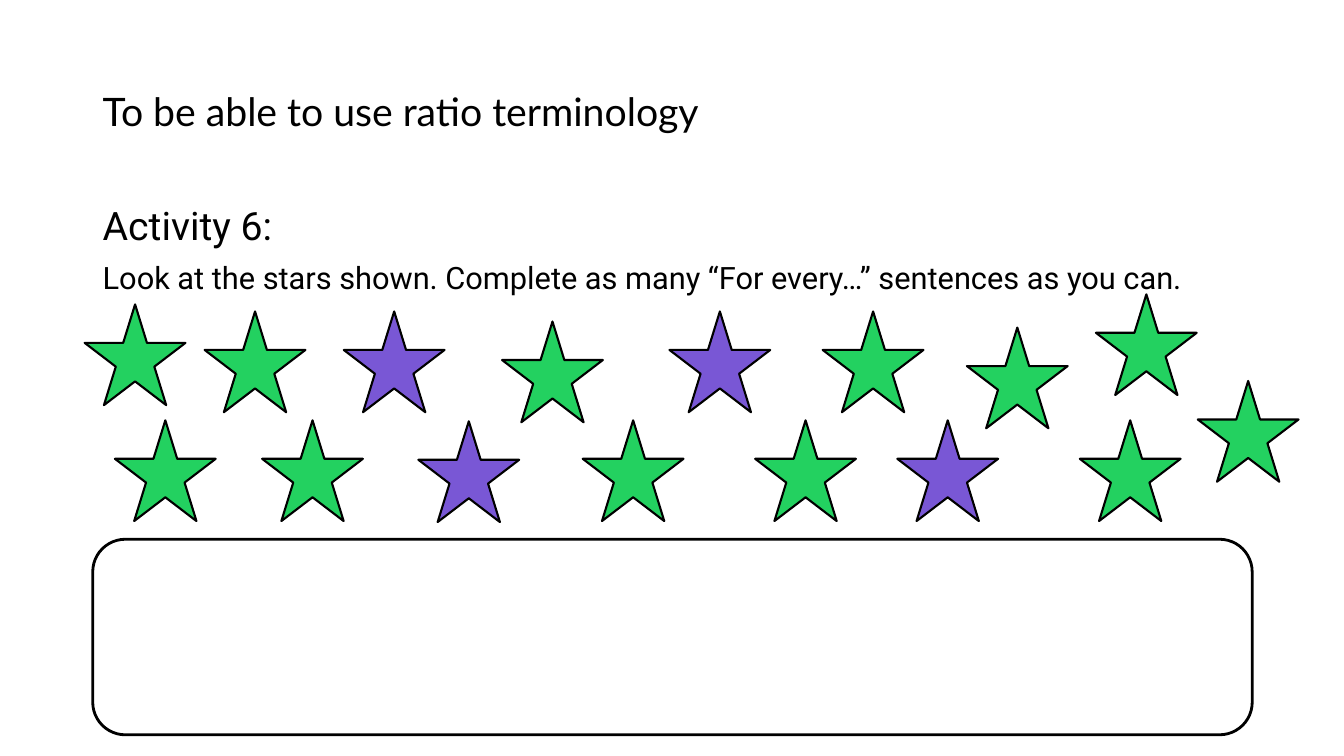
import dataclasses

import pptx
import pptx.dml.color
import pptx.enum.shapes
import pptx.enum.text
import pptx.util

PX = 9144
SHAPE = pptx.enum.shapes.MSO_SHAPE
ANCHOR = pptx.enum.text.MSO_ANCHOR


@dataclasses.dataclass(frozen=True)
class Theme:
    """Colours, fonts and sizes of the slide."""
    ink: str = "000000"
    paper: str = "FFFFFF"
    green: str = "23D160"
    purple: str = "7957D5"
    title_font: str = "Lato"
    body_font: str = "Roboto"
    heading_size: int = 28
    task_size: int = 22
    star_line: float = 1.5
    answer_line: float = 2


THEME = Theme()
STAR = 100
STARS = [
    (119, 17, THEME.green), (176, 125, THEME.green), (257, 17, THEME.purple),
    (414, 27, THEME.green), (494, 125, THEME.green), (580, 17, THEME.purple),
    (331, 126, THEME.purple), (665, 125, THEME.green), (875, 33, THEME.green),
    (987, 125, THEME.green), (806, 125, THEME.purple), (732, 17, THEME.green),
    (30, 125, THEME.green), (0, 10, THEME.green), (1003, 0, THEME.green),
    (1104, 86, THEME.green),
]


def emu(*lengths):
    """Turn px lengths into EMU."""
    return [pptx.util.Emu(n * PX) for n in lengths]


def rgb(color):
    """Turn a hex string into a colour."""
    return pptx.dml.color.RGBColor.from_string(color)


def add_box(s, box, anchor=ANCHOR.TOP):
    """Add a wrapping text box and return its text frame."""
    tf = s.shapes.add_textbox(*emu(*box)).text_frame
    tf.word_wrap = True
    tf.vertical_anchor = anchor
    return tf


def write(p, text, *, font, size, color=THEME.ink, before=0):
    """Write formatted text into a paragraph."""
    p.line_spacing = 0.9
    p.space_before = pptx.util.Pt(before)
    r = p.add_run()
    r.text = text
    r.font.name = font
    r.font.size = pptx.util.Pt(size)
    r.font.color.rgb = rgb(color)


def add_outlined(s, kind, box, fill, width):
    """Add a filled preset shape with a dark outline."""
    sp = s.shapes.add_shape(kind, *emu(*box))
    sp.shadow.inherit = False
    sp.fill.solid()
    sp.fill.fore_color.rgb = rgb(fill)
    sp.line.color.rgb = rgb(THEME.ink)
    sp.line.width = pptx.util.Pt(width)


def add_title(s, box):
    """Place the learning objective."""
    tf = add_box(s, box, ANCHOR.MIDDLE)
    write(tf.paragraphs[0], "To be able to use ratio terminology",
          font=THEME.title_font, size=THEME.heading_size)


def add_activity(s, box):
    """Place the activity heading and its instruction."""
    tf = add_box(s, box)
    write(tf.paragraphs[0], "Activity 6:", font=THEME.body_font, size=THEME.heading_size)
    write(tf.add_paragraph(),
          "Look at the stars shown. Complete as many “For every…” sentences as you can.",
          font=THEME.body_font, size=THEME.task_size, before=10)


def add_stars(s, box):
    """Scatter the green and purple stars inside the box."""
    left, top, _, _ = box
    for x, y, color in STARS:
        add_outlined(s, SHAPE.STAR_5_POINT, (left + x, top + y, STAR, STAR),
                     color, THEME.star_line)


def add_answer_area(s, box):
    """Place the empty rounded answer area."""
    add_outlined(s, SHAPE.ROUNDED_RECTANGLE, box, THEME.paper, THEME.answer_line)


def build_activity_slide(prs):
    """Build the ratio activity slide."""
    s = prs.slides.add_slide(prs.slide_layouts[6])
    s.background.fill.solid()
    s.background.fill.fore_color.rgb = rgb(THEME.paper)
    add_title(s, (92, 40, 960, 145))
    add_activity(s, (92, 200, 1171, 476))
    add_stars(s, (84, 292, 1204, 226))
    add_answer_area(s, (92, 535, 1150, 194))


def main():
    """Create and save the presentation."""
    prs = pptx.Presentation()
    prs.slide_width, prs.slide_height = emu(1333, 750)
    build_activity_slide(prs)
    prs.save("out.pptx")


if __name__ == "__main__":
    main()
